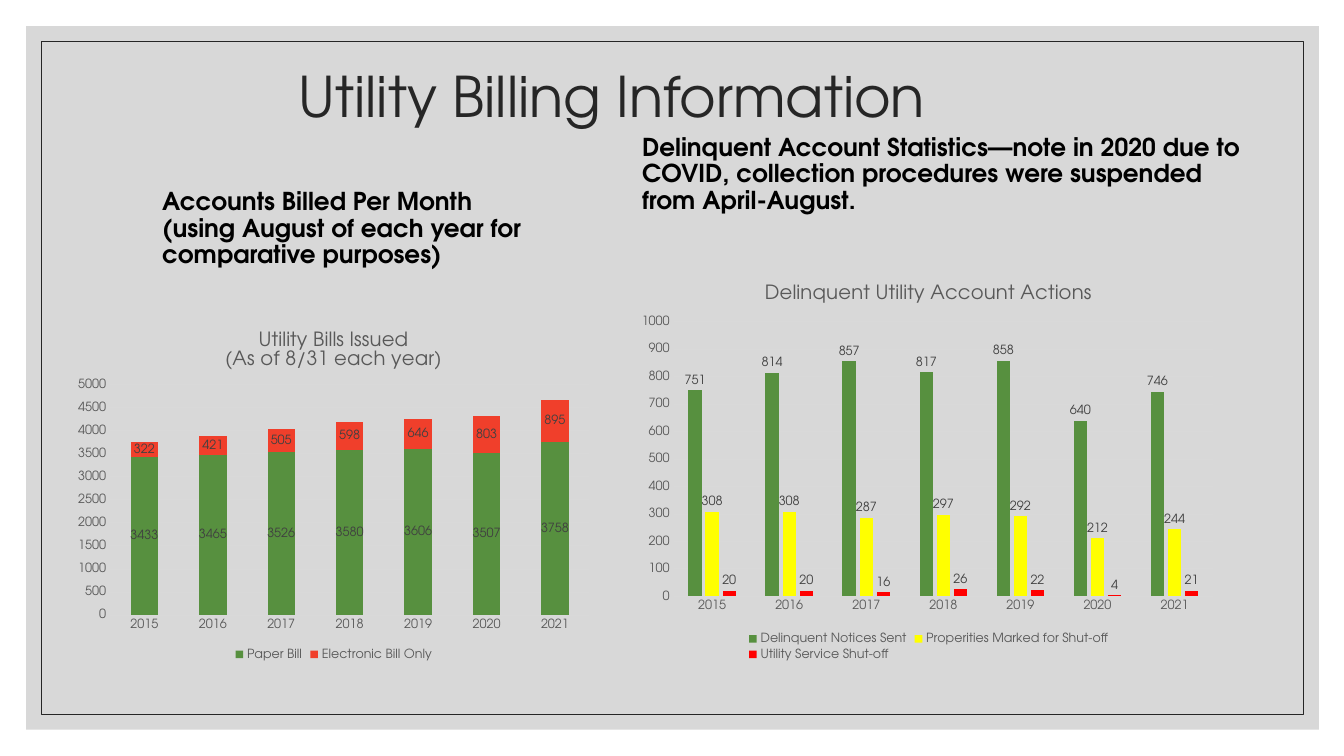
from dataclasses import dataclass

from lxml import etree
from pptx import Presentation
from pptx.chart.data import CategoryChartData
from pptx.dml.color import RGBColor
from pptx.enum.chart import XL_CHART_TYPE, XL_LABEL_POSITION, XL_LEGEND_POSITION, XL_TICK_MARK
from pptx.enum.shapes import MSO_SHAPE
from pptx.enum.text import MSO_ANCHOR, PP_ALIGN
from pptx.oxml import parse_xml
from pptx.oxml.ns import nsdecls, qn
from pptx.util import Inches, Pt


@dataclass(frozen=True)
class Theme:
    font: str = "TeX Gyre Adventor"
    panel: str = "BFBFBF"
    ink: str = "262626"
    black: str = "000000"
    axis_text: str = "595959"
    label_text: str = "404040"
    grid: str = "D9D9D9"
    green: str = "57903F"
    orange: str = "F03F2B"
    yellow: str = "FFFF00"
    red: str = "FF0000"
    title: float = 40
    heading: float = 17.6
    chart_title: float = 14
    chart_text: float = 9


THEME = Theme()
YEARS = [str(year) for year in range(2015, 2022)]
BILLS = [
    ("Paper Bill", THEME.green, [3433, 3465, 3526, 3580, 3606, 3507, 3758]),
    ("Electronic Bill Only", THEME.orange, [322, 421, 505, 598, 646, 803, 895]),
]
ACTIONS = [
    ("Delinquent Notices Sent", THEME.green, [751, 814, 857, 817, 858, 640, 746]),
    ("Properities Marked for Shut-off", THEME.yellow, [308, 308, 287, 297, 292, 212, 244]),
    ("Utility Service Shut-off", THEME.red, [20, 20, 16, 26, 22, 4, 21]),
]


def rgb(color):
    return RGBColor.from_string(color)


def style_font(font, size, color, bold=False):
    font.name = THEME.font
    font.size = Pt(size)
    font.color.rgb = rgb(color)
    font.bold = bold


def style_line(line, color):
    line.color.rgb = rgb(color)
    line.width = Pt(0.75)


def fill_text(tf, lines, *, size, color, bold=False, align=PP_ALIGN.LEFT, spacing=0.9):
    for i, line in enumerate(lines):
        p = tf.paragraphs[0] if i == 0 else tf.add_paragraph()
        p.alignment = align
        p.line_spacing = spacing
        r = p.add_run()
        r.text = line
        style_font(r.font, size, color, bold)


def add_text(slide, box, *lines, **text_format):
    tf = slide.shapes.add_textbox(*map(Inches, box)).text_frame
    tf.word_wrap = True
    tf.vertical_anchor = MSO_ANCHOR.MIDDLE
    fill_text(tf, lines, **text_format)


def add_rect(slide, box, *, fill=None, opacity=100, line=None):
    sp = slide.shapes.add_shape(MSO_SHAPE.RECTANGLE, *map(Inches, box))
    sp.shadow.inherit = False
    if fill:
        sp.fill.solid()
        sp.fill.fore_color.rgb = rgb(fill)
        clr = sp.fill._xPr.find(qn("a:solidFill"))[0]
        etree.SubElement(clr, qn("a:alpha"), val=str(opacity * 1000))
    else:
        sp.fill.background()
    if line:
        sp.line.color.rgb = rgb(line)
        sp.line.width = Pt(0.5)
    else:
        sp.line.fill.background()


def place_plot(chart, plot_box):
    """Fix the inner plot area as fractions of the chart: left, top, width, height."""
    area = chart._chartSpace.chart.plotArea
    for old in area.findall(qn("c:layout")):
        area.remove(old)
    values = "".join(f'<c:{tag} val="{v}"/>' for tag, v in zip("xywh", plot_box))
    area.insert(0, parse_xml(
        f'<c:layout {nsdecls("c")}><c:manualLayout><c:layoutTarget val="inner"/>'
        f'<c:xMode val="edge"/><c:yMode val="edge"/>{values}</c:manualLayout></c:layout>'))


def style_axes(chart, maximum, step):
    for axis in (chart.category_axis, chart.value_axis):
        axis.major_tick_mark = axis.minor_tick_mark = XL_TICK_MARK.NONE
        style_font(axis.tick_labels.font, THEME.chart_text, THEME.axis_text)
    style_line(chart.category_axis.format.line, THEME.grid)
    values = chart.value_axis
    values.format.line.fill.background()
    values.minimum_scale, values.maximum_scale, values.major_unit = 0, maximum, step
    style_line(values.major_gridlines.format.line, THEME.grid)


def add_columns(slide, box, kind, title, rows, *, maximum, step, gap, overlap,
                label_position, plot_box):
    data = CategoryChartData()
    data.categories = YEARS
    for name, _, values in rows:
        data.add_series(name, values)
    chart = slide.shapes.add_chart(kind, *map(Inches, box), data).chart
    style_font(chart.font, 10, THEME.black)
    chart.has_title = True
    fill_text(chart.chart_title.text_frame, title, size=THEME.chart_title,
              color=THEME.axis_text, align=PP_ALIGN.CENTER, spacing=1.0)
    chart.chart_title.include_in_layout = False
    chart.has_legend = True
    chart.legend.position = XL_LEGEND_POSITION.BOTTOM
    chart.legend.include_in_layout = False
    style_font(chart.legend.font, THEME.chart_text, THEME.axis_text)
    style_axes(chart, maximum, step)
    place_plot(chart, plot_box)

    plot = chart.plots[0]
    plot.vary_by_categories = False
    plot.gap_width, plot.overlap = gap, overlap
    for series, (_, color, _) in zip(plot.series, rows):
        series.format.fill.solid()
        series.format.fill.fore_color.rgb = rgb(color)
        series.invert_if_negative = False
        labels = series.data_labels
        labels.show_value = True
        labels.position = label_position
        style_font(labels.font, THEME.chart_text, THEME.label_text)


def main():
    prs = Presentation()
    prs.slide_width, prs.slide_height = Inches(13.33), Inches(7.5)
    slide = prs.slides.add_slide(prs.slide_layouts[6])

    add_rect(slide, (0.26, 0.26, 12.82, 6.98), fill=THEME.panel, opacity=60)
    add_rect(slide, (0.41, 0.41, 12.52, 6.68), line=THEME.ink)

    add_text(slide, (0.57, 0.24, 11, 1.5), "Utility Billing Information",
             size=THEME.title, color=THEME.ink, align=PP_ALIGN.CENTER)
    heading = dict(size=THEME.heading, color=THEME.black, bold=True)
    add_text(slide, (1.51, 1.74, 4.42, 1.07), "Accounts Billed Per Month",
             "(using August of each year for comparative purposes)", **heading)
    add_text(slide, (6.27, 1.26, 6.24, 0.95),
             "Delinquent Account Statistics—note in 2020 due to COVID, "
             "collection procedures were suspended from April-August.", **heading)

    add_columns(slide, (0.67, 3.12, 5.28, 3.47), XL_CHART_TYPE.COLUMN_STACKED,
                ["Utility Bills Issued", "(As of 8/31 each year)"], BILLS,
                maximum=5000, step=500, gap=150, overlap=100,
                label_position=XL_LABEL_POSITION.CENTER, plot_box=(0.08, 0.2, 0.9, 0.66))
    add_columns(slide, (6.27, 2.64, 5.88, 3.95), XL_CHART_TYPE.COLUMN_CLUSTERED,
                ["Delinquent Utility Account Actions"], ACTIONS,
                maximum=1000, step=100, gap=219, overlap=-27,
                label_position=XL_LABEL_POSITION.OUTSIDE_END, plot_box=(0.07, 0.14, 0.91, 0.69))

    prs.save("out.pptx")


if __name__ == "__main__":
    main()
